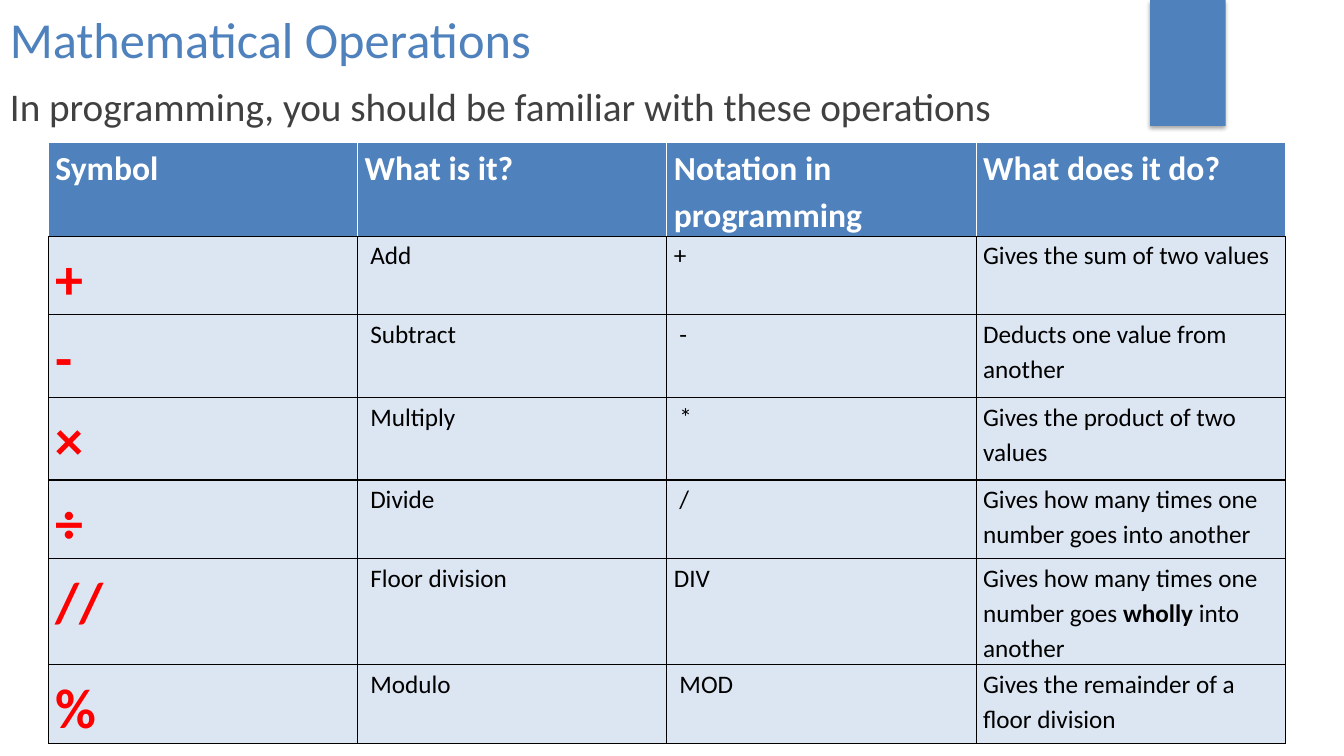
from pptx import Presentation
from pptx.dml.color import RGBColor
from pptx.enum.shapes import MSO_SHAPE
from pptx.enum.text import MSO_ANCHOR
from pptx.oxml import parse_xml
from pptx.oxml.ns import nsdecls
from pptx.util import Pt

BLUE, PALE, WHITE, BLACK = "4F81BD", "DCE6F2", "FFFFFF", "000000"
RED, GREY = "FF0000", "404040"

HEADERS = ["Symbol", "What is it?", "Notation in programming", "What does it do?"]
OPERATIONS = [
    ("+", "Add", "+", "Gives the sum of two values"),
    ("-", "Subtract", "-", "Deducts one value from another"),
    ("×", "Multiply", "*", "Gives the product of two values"),
    ("÷", "Divide", "/", "Gives how many times one number goes into another"),
    ("//", "Floor division", "DIV",
     "Gives how many times one number goes **wholly** into another"),
    ("%", "Modulo", "MOD", "Gives the remainder of a floor division"),
]
FLUSH_NOTATIONS = ("+", "DIV")
ROW_HEIGHTS = [67.2, 56.2, 59, 59, 56.2, 75.7, 56.2]
COLUMN_WIDTH = 220.9


def rgb(value):
    return RGBColor.from_string(value)


class SlideBuilder:
    font = "Calibri"

    def __init__(self, prs):
        self.s = prs.slides.add_slide(prs.slide_layouts[6])

    def style(self, p, size, color, bold=False):
        p.font.name = self.font
        p.font.size = Pt(size)
        p.font.color.rgb = rgb(color)
        p.font.bold = bold

    def bar(self, x, y, w, h, color):
        """Add a borderless rectangle with a soft shadow below it."""
        sp = self.s.shapes.add_shape(MSO_SHAPE.RECTANGLE, Pt(x), Pt(y), Pt(w), Pt(h))
        sp.fill.solid()
        sp.fill.fore_color.rgb = rgb(color)
        sp.line.fill.background()
        sp._element.spPr.append(parse_xml(
            f'<a:effectLst {nsdecls("a")}>'
            f'<a:outerShdw blurRad="{Pt(3.1)}" dist="{Pt(1.8)}" dir="5400000" rotWithShape="0">'
            f'<a:srgbClr val="{BLACK}"><a:alpha val="35000"/></a:srgbClr>'
            '</a:outerShdw></a:effectLst>'))

    def text(self, x, y, w, h, text, size, color, anchor=MSO_ANCHOR.TOP):
        tf = self.s.shapes.add_textbox(Pt(x), Pt(y), Pt(w), Pt(h)).text_frame
        tf.word_wrap = True
        tf.vertical_anchor = anchor
        p = tf.paragraphs[0]
        p.text = text
        self.style(p, size, color)

    def table(self, x, y, column_width, row_heights, columns):
        shape = self.s.shapes.add_table(
            len(row_heights), columns, Pt(x), Pt(y),
            Pt(column_width * columns), Pt(sum(row_heights)))
        for column in shape.table.columns:
            column.width = Pt(column_width)
        for row, height in zip(shape.table.rows, row_heights):
            row.height = Pt(height)
        return shape.table

    def cell(self, cell, text, size, color, fill, borders, bold=False, indent=0):
        """Fill a table cell; words between ** marks are bold."""
        cell.margin_left, cell.margin_right = Pt(5 + indent), Pt(5)
        cell.margin_top = cell.margin_bottom = 0
        p = cell.text_frame.paragraphs[0]
        p.line_spacing = 1.15
        self.style(p, size, color, bold)
        for i, part in enumerate(text.split("**")):
            r = p.add_run()
            r.text = part
            if i % 2:
                r.font.bold = True
        tc_pr = cell._tc.get_or_add_tcPr()
        for side, border in zip("LRTB", borders):
            tc_pr.append(parse_xml(
                f'<a:ln{side} {nsdecls("a")} w="{Pt(1)}"><a:solidFill>'
                f'<a:srgbClr val="{border}"/></a:solidFill></a:ln{side}>'))
        cell.fill.solid()
        cell.fill.fore_color.rgb = rgb(fill)


def main():
    prs = Presentation()
    prs.slide_width, prs.slide_height = Pt(960), Pt(540)
    slide = SlideBuilder(prs)

    slide.bar(821.5, 0, 54, 90, BLUE)
    slide.text(0, 0, 690, 55.4, "Mathematical Operations", 36, BLUE, MSO_ANCHOR.MIDDLE)
    slide.text(0, 55.4, 790, 289,
               "In programming, you should be familiar with these operations", 28, GREY)

    table = slide.table(34.6, 101.5, COLUMN_WIDTH, ROW_HEIGHTS, len(HEADERS))
    for col, header in enumerate(HEADERS):
        slide.cell(table.cell(0, col), header, 24, WHITE, BLUE,
                   (WHITE, WHITE, WHITE, BLACK), bold=True)
    for row, (symbol, name, notation, meaning) in enumerate(OPERATIONS, 1):
        borders = (BLACK,) * 4
        slide.cell(table.cell(row, 0), symbol, 40, RED, PALE, borders, bold=True)
        notation_indent = 0 if notation in FLUSH_NOTATIONS else 4
        details = [(name, 4), (notation, notation_indent), (meaning, 0)]
        for col, (text, indent) in enumerate(details, 1):
            slide.cell(table.cell(row, col), text, 18, BLACK, PALE, borders, indent=indent)

    prs.save("out.pptx")


if __name__ == "__main__":
    main()
